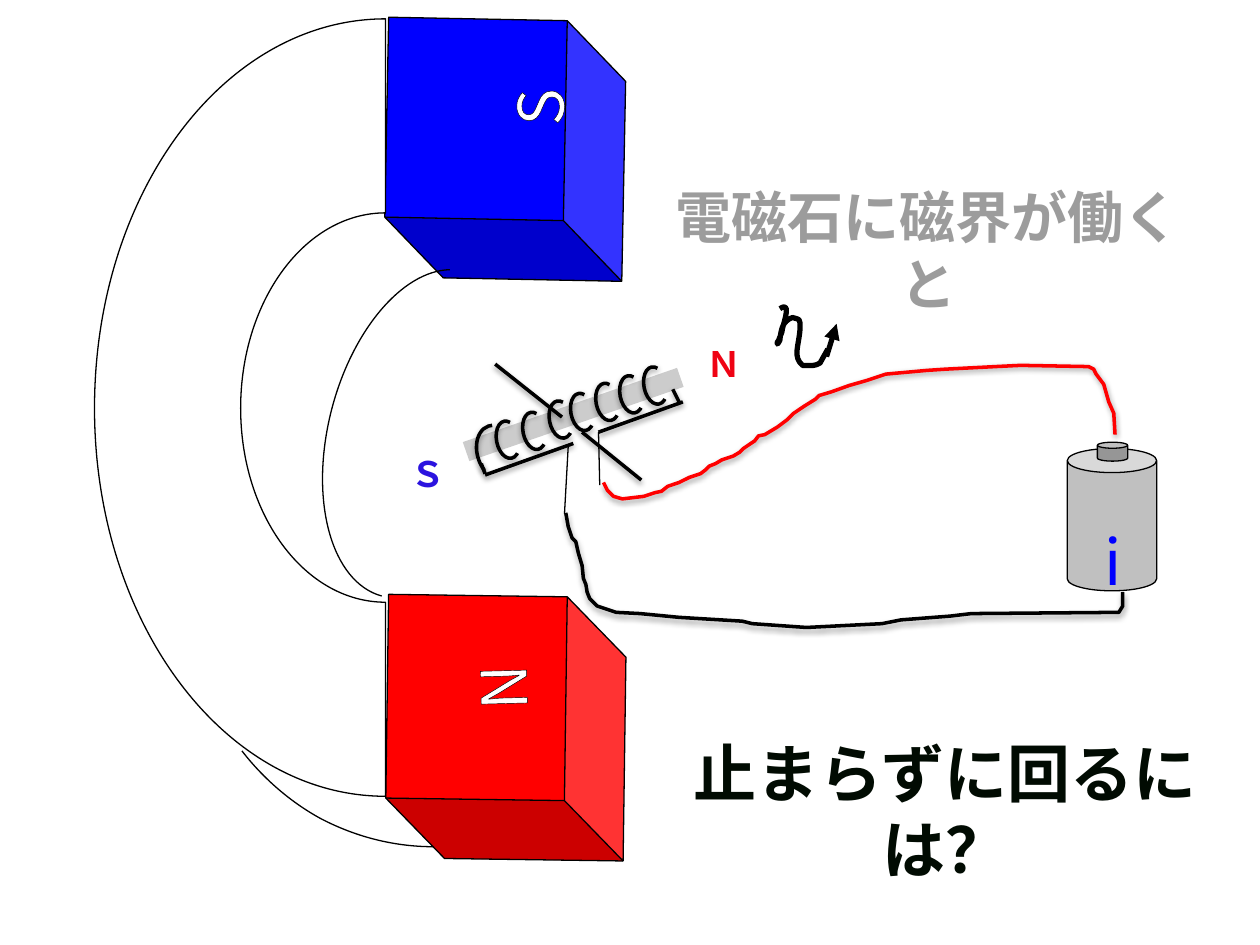
from lxml import etree
from pptx import Presentation
from pptx.dml.color import RGBColor
from pptx.enum.shapes import MSO_CONNECTOR as Link, MSO_SHAPE as Shape
from pptx.enum.text import MSO_AUTO_SIZE as AutoSize, PP_ALIGN as Align
from pptx.oxml.ns import qn
from pptx.util import Pt

PX = 9144  # 100 px to the inch
BLACK, WHITE, RED, BLUE = "000000", "FFFFFF", "FF0000", "0000FF"
CJK = "Noto Sans CJK JP"


def paint(fill, color):
    if color:
        fill.solid()
        fill.fore_color.rgb = RGBColor.from_string(color)
    else:
        fill.background()


def add_node(parent, tag, **attributes):
    node = etree.SubElement(parent, qn(tag))
    for name, value in attributes.items():
        node.set(name, str(value))
    return node


class Sketch:
    def __init__(self, page):
        self.page = page
        self.shapes = page.shapes

    def group(self):
        self.shapes = self.page.shapes.add_group_shape().shapes

    def ungroup(self):
        self.shapes = self.page.shapes

    def finish(self, item, line, width, shadow):
        paint(item.line.fill, line)
        if line:
            item.line.width = Pt(width)
        effects = add_node(item.element.spPr, "a:effectLst")
        if shadow:
            outer = add_node(effects, "a:outerShdw", blurRad=40000, dist=20000,
                             dir=5400000, rotWithShape=0)
            add_node(add_node(outer, "a:srgbClr", val=BLACK), "a:alpha", val=38000)

    def shape(self, kind, box, fill=None, line=BLACK, width=0.75, turn=0,
              adjust=(), flip=False, shadow=False):
        item = self.shapes.add_shape(kind, *(n * PX for n in box))
        for i, value in enumerate(adjust):
            item.adjustments[i] = value
        item.rotation = turn
        if flip:
            item.element.spPr.find(qn("a:xfrm")).set("flipV", "1")
        paint(item.fill, fill)
        self.finish(item, line, width, shadow)

    def line(self, start, end, width=2, shadow=True, arrow=False):
        item = self.shapes.add_connector(Link.STRAIGHT, *(n * PX for n in start + end))
        self.finish(item, BLACK, width, shadow)
        if arrow:
            add_node(item.element.spPr.find(qn("a:ln")), "a:tailEnd", type="triangle")

    def outline(self, points, fill=None, line=BLACK, width=0.75, closed=False, shadow=False):
        scaled = [(x * PX, y * PX) for x, y in points]
        builder = self.shapes.build_freeform(*scaled[0])
        builder.add_line_segments(scaled[1:], close=closed)
        item = builder.convert_to_shape()
        paint(item.fill, fill)
        self.finish(item, line, width, shadow)
        return item

    def curve(self, points, **style):
        """Joined cubic curves: a start, then two handles and an end for each."""
        item = self.outline(points[::3], **style)
        segments = list(item.element.iter(qn("a:lnTo")))
        for i, segment in enumerate(segments[:len(points) // 3]):
            segment.tag = qn("a:cubicBezTo")
            for spot, (x, y) in enumerate(points[3 * i + 1:3 * i + 3]):
                handle = etree.Element(qn("a:pt"), x=str(x * PX - item.left),
                                       y=str(y * PX - item.top))
                segment.insert(spot, handle)

    def text(self, words, box, size, color, font="Arial", bold=False, turn=0,
             wrap=True, grow=False, edge=0, edge_color=BLACK):
        item = self.shapes.add_textbox(*(n * PX for n in box))
        item.rotation = turn
        frame = item.text_frame
        frame.word_wrap = wrap
        frame.auto_size = AutoSize.SHAPE_TO_FIT_TEXT if grow else AutoSize.NONE
        para = frame.paragraphs[0]
        para.alignment = Align.CENTER
        para._p.get_or_add_pPr().set("hangingPunct", "0")
        span = para.add_run()
        span.text = words
        span.font.name, span.font.size, span.font.bold = font, Pt(size), bold
        paint(span.font.fill, color)
        if edge:
            border = etree.Element(qn("a:ln"), w=str(Pt(edge)))
            add_node(add_node(border, "a:solidFill"), "a:srgbClr", val=edge_color)
            span.font._element.insert(0, border)


def draw_coil(art):
    art.group()
    art.shape(Shape.RECTANGLE, (365, 321, 180, 16), "CCCCCC", line=None, turn=340.9)
    art.shape(Shape.ARC, (379, 337, 32, 45), width=2, turn=340.9,
              adjust=(87.92, 166.68), shadow=True)
    for x, y in ((394, 334), (415, 327), (436, 318), (453, 312),
                 (473, 304), (492, 298), (511, 291)):
        art.shape(Shape.ARC, (x, y, 18, 30), width=2, turn=168.8,
                  adjust=(150.98, 68.6), flip=True, shadow=True)
    for start, end in (((382, 368), (385, 376)), ((534, 309), (539, 319)),
                       ((385, 377), (455, 352)), ((542, 319), (475, 343))):
        art.line(start, end)
    art.line((475, 343), (476, 385), width=0.75, shadow=False)
    art.line((448, 408), (451, 354), width=0.75, shadow=False)
    art.ungroup()
    art.text("Ｎ", (548, 267, 53, 44), 20, "EF0314", bold=True, grow=True)
    art.text("Ｓ", (316, 354, 48, 44), 20, "2B13DF", bold=True, grow=True)


def draw_circuit(art):
    # Battery
    art.group()
    art.shape(Shape.CAN, (847, 356, 71, 113), "C0C0C0", adjust=(0.27,))
    art.shape(Shape.CAN, (871, 351, 24, 15), "969696", adjust=(0.32,))
    art.ungroup()
    # Wires
    art.outline([(479, 383), (482, 389), (487, 394), (494, 396), (511, 394), (520, 391),
                 (525, 390), (530, 386), (539, 383), (547, 379), (556, 376), (560, 373),
                 (563, 370), (568, 368), (573, 365), (582, 362), (587, 359), (590, 356),
                 (599, 350), (602, 346), (607, 345), (617, 339), (625, 333), (630, 328),
                 (639, 322), (647, 317), (650, 314), (660, 311), (674, 306), (688, 302),
                 (703, 297), (736, 294), (751, 293), (790, 291), (810, 290), (864, 291),
                 (868, 293), (870, 297), (876, 305), (880, 319), (884, 328), (885, 345)],
                line=RED, width=2, shadow=True)
    art.outline([(449, 407), (451, 418), (454, 427), (457, 430), (459, 439), (462, 449),
                 (463, 459), (465, 464), (466, 470), (468, 475), (474, 481), (489, 486),
                 (508, 487), (539, 490), (589, 493), (597, 495), (640, 498), (700, 495),
                 (715, 492), (754, 489), (771, 487), (888, 486), (891, 481), (891, 470)],
                width=2, shadow=True)
    art.text("i", (877, 410, 13, 33), 36, BLUE, CJK, wrap=False, edge=0.75, edge_color=WHITE)
    # Turning arrow
    art.group()
    art.curve([(619, 245), (628, 239), (623, 253), (621, 261),
               (621, 264), (619, 267), (618, 270), (617, 271), (616, 273), (617, 273),
               (618, 273), (618, 271), (619, 270), (620, 261), (621, 255), (629, 252),
               (635, 254), (635, 252), (635, 261), (634, 275), (629, 283), (637, 290),
               (644, 290), (646, 291), (651, 288), (653, 284), (655, 281), (657, 277)],
              width=3)
    art.line((656, 283), (664, 257), width=3, shadow=False, arrow=True)
    art.ungroup()


def draw_magnet(art):
    art.group()
    art.curve([(192, 596), (209, 618), (231, 637), (255, 650),
               (284, 665), (316, 673), (350, 672)])
    # South pole
    art.shape(Shape.CUBE, (298, 24, 206, 189), BLUE, turn=91.1, adjust=(0.25,))
    art.text("S", (385, 58, 69, 54), 36, WHITE, CJK, turn=270, wrap=False, edge=0.75)
    art.curve([(357, 214), (319, 215), (279, 263), (263, 326),
               (245, 397), (263, 462), (303, 473)])
    # North pole
    art.shape(Shape.CUBE, (297, 483, 209, 189), RED, turn=90.8, adjust=(0.25,))
    art.text("N", (381, 523, 67, 44), 36, WHITE, CJK, turn=88.5, wrap=False, edge=0.75)
    # Curved body: inner bow, straight end, outer bow
    art.curve([(306, 478), (242, 478), (191, 409), (191, 324),
               (191, 239), (242, 169), (306, 169),
               (306, 118), (306, 66), (306, 15),
               (178, 15), (75, 153), (75, 324),
               (75, 494), (178, 632), (306, 632)], fill=WHITE, closed=True)
    art.ungroup()


def main():
    deck = Presentation()
    deck.slide_width, deck.slide_height = 1000 * PX, 750 * PX
    art = Sketch(deck.slides.add_slide(deck.slide_layouts[6]))
    draw_coil(art)
    draw_circuit(art)
    draw_magnet(art)
    # Axle
    art.line((462, 343), (509, 381))
    art.line((393, 289), (446, 331))
    # Captions
    art.text("止まらずに回るには？", (494, 578, 512, 71), 36, "010B02", bold=True, grow=True)
    art.text("電磁石に磁界が働くと", (517, 140, 439, 64), 32, "9C9C9C", bold=True,
             grow=True, edge=1)
    deck.save("out.pptx")


if __name__ == "__main__":
    main()
